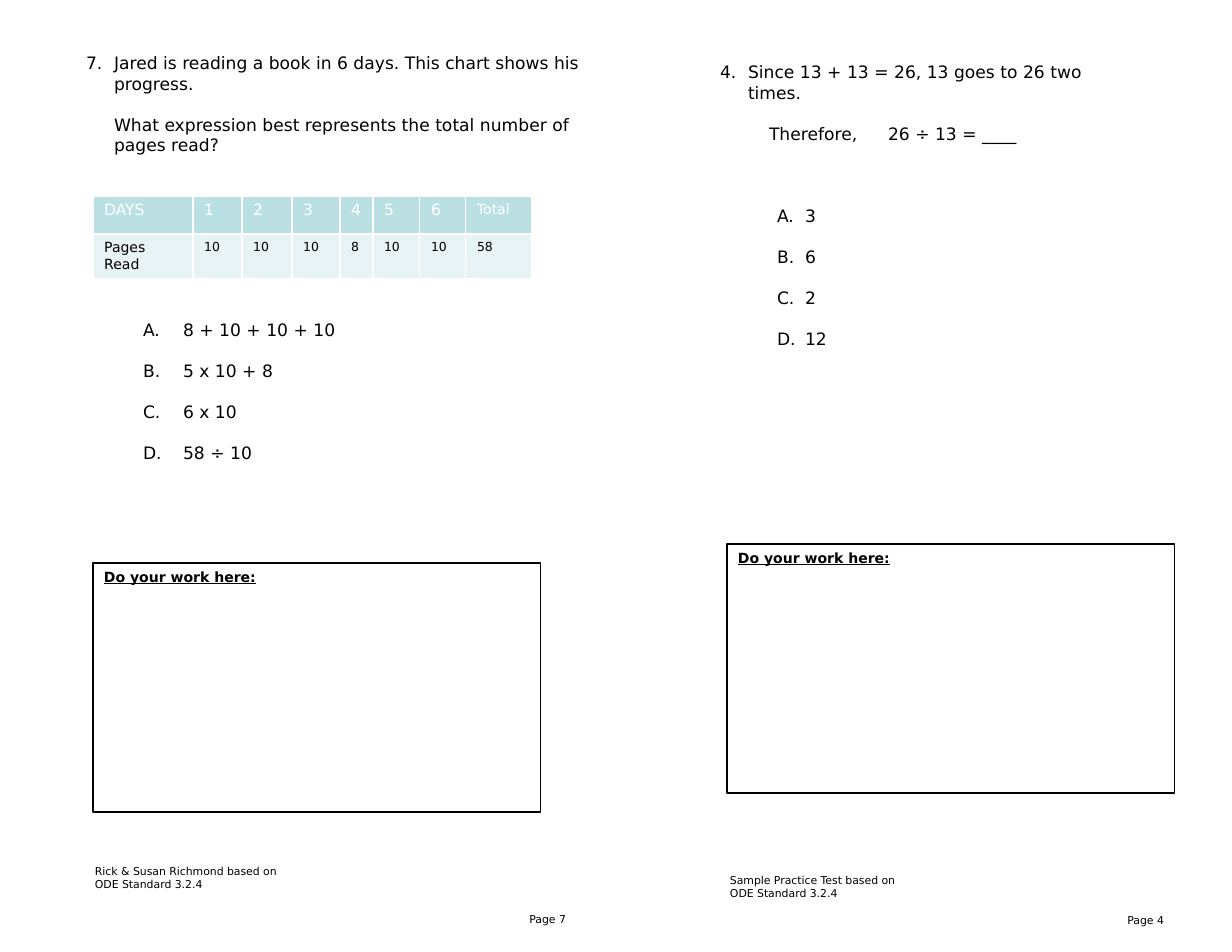
from pptx import Presentation
from pptx.dml.color import RGBColor
from pptx.enum.shapes import MSO_SHAPE as Shape
from pptx.enum.text import MSO_ANCHOR as Anchor, PP_ALIGN as Align
from pptx.oxml.xmlchemy import OxmlElement
from pptx.util import Pt

PX = 914400 / 112
FONT = "DejaVu Sans"
COLORS = {"text": "000000", "white": "FFFFFF", "header": "BBE0E3", "row": "E7F3F4"}
LINE = 13.2  # points in one line of question text


def px(value):
    return round(value * PX)


def write(frame, text, size, color="text", align=Align.LEFT):
    frame.word_wrap = True
    frame.text = text
    for paragraph in frame.paragraphs:
        paragraph.alignment = align
        paragraph.font.name = FONT
        paragraph.font.size = Pt(size)
        paragraph.font.bold = False
        paragraph.font.color.rgb = RGBColor.from_string(COLORS[color])


presentation = Presentation()
presentation.slide_width, presentation.slide_height = px(1232), px(952)
slide = presentation.slides.add_slide(presentation.slide_layouts[6])

# Page numbers and footers
small_texts = [
    (1083, 908, 92, 30, "Page 4", Align.RIGHT),
    (485, 907, 92, 30, "Page 7", Align.RIGHT),
    (719, 868, 215, 38, "Sample Practice Test based on\nODE Standard 3.2.4", Align.LEFT),
    (84, 859, 215, 38, "Rick & Susan Richmond based on ODE Standard 3.2.4", Align.LEFT),
]
for left, top, width, height, text, align in small_texts:
    box = slide.shapes.add_textbox(px(left), px(top), px(width), px(height))
    write(box.text_frame, text, 7, align=align)

# Work areas
for left, top in [(727, 544), (93, 563)]:
    area = slide.shapes.add_shape(Shape.RECTANGLE, px(left), px(top), px(448), px(249))
    area.shadow.inherit = False
    area.fill.background()
    area.line.color.rgb = RGBColor.from_string(COLORS["text"])
    area.line.width = Pt(0.75)
    area.text_frame.vertical_anchor = Anchor.TOP
    write(area.text_frame, "Do your work here:", 9)
    heading = area.text_frame.paragraphs[0]
    heading.font.bold = heading.font.underline = True

# Questions: each line is text, blank lines above, left margin, first-line indent, numbering
questions = [
    {
        "place": (709, 56, 420, 301),
        "number": 4,
        "lines": [
            ("Since 13 + 13 = 26, 13 goes to 26 two times.", 0, 28, -28, "arabicPeriod"),
            ("Therefore,\t26 ÷ 13 = ____", 1, 0, 49, None),
        ],
        "answers": ["3", "6", "2", "12"],
        "gap": 3,
        "margin": (85, -28),
    },
    {
        "place": (75, 47, 523, 426),
        "number": 7,
        "lines": [
            ("Jared is reading a book in 6 days. This chart shows his progress.",
             0, 28, -28, "arabicPeriod"),
            ("What expression best represents the total number of pages read?", 1, 28, 0, None),
        ],
        "answers": ["8 + 10 + 10 + 10", "5 x 10 + 8", "6 x 10", "58 ÷ 10"],
        "gap": 8,
        "margin": (97, -40),
    },
]
for question in questions:
    lines = list(question["lines"])
    for index, answer in enumerate(question["answers"]):
        gap = 1 if index else question["gap"]
        lines.append((answer, gap, *question["margin"], "alphaUcPeriod"))
    box = slide.shapes.add_textbox(*map(px, question["place"]))
    write(box.text_frame, "\n".join(line[0] for line in lines), 11)
    for paragraph, line in zip(box.text_frame.paragraphs, lines):
        text, gap, margin, indent, numbering = line
        paragraph.space_before = Pt(gap * LINE)
        properties = paragraph._p.get_or_add_pPr()
        properties.set("marL", str(px(margin)))
        properties.set("indent", str(px(indent)))
        if numbering:
            bullet = OxmlElement("a:buAutoNum")
            bullet.set("type", numbering)
            if numbering == "arabicPeriod":
                bullet.set("startAt", str(question["number"]))
            properties.insert_element_before(bullet, "a:tabLst", "a:defRPr", "a:extLst")
        if "\t" in text:
            tabs = OxmlElement("a:tabLst")
            tab = OxmlElement("a:tab")
            tab.set("pos", str(px(176)))
            tab.set("algn", "l")
            tabs.append(tab)
            properties.insert_element_before(tabs, "a:defRPr", "a:extLst")

# Reading chart
rows = [
    ["DAYS", "1", "2", "3", "4", "5", "6", "Total"],
    ["Pages\nRead", "10", "10", "10", "8", "10", "10", "58"],
]
column_widths = [100, 49, 50, 48, 33, 47, 46, 66]
row_heights = [38, 44]
table = slide.shapes.add_table(
    len(rows), len(column_widths), px(93), px(196), px(sum(column_widths)), px(sum(row_heights))
).table
for column, width in zip(table.columns, column_widths):
    column.width = px(width)
for row, height in zip(table.rows, row_heights):
    row.height = px(height)
for row_index, row in enumerate(rows):
    for column_index, text in enumerate(row):
        cell = table.cell(row_index, column_index)
        cell.fill.solid()
        cell.fill.fore_color.rgb = RGBColor.from_string(COLORS["row" if row_index else "header"])
        if row_index:
            size = 8 if column_index else 9
        else:
            size = 9 if text == "Total" else 10
        write(cell.text_frame, text, size, "text" if row_index else "white")

presentation.save("out.pptx")
